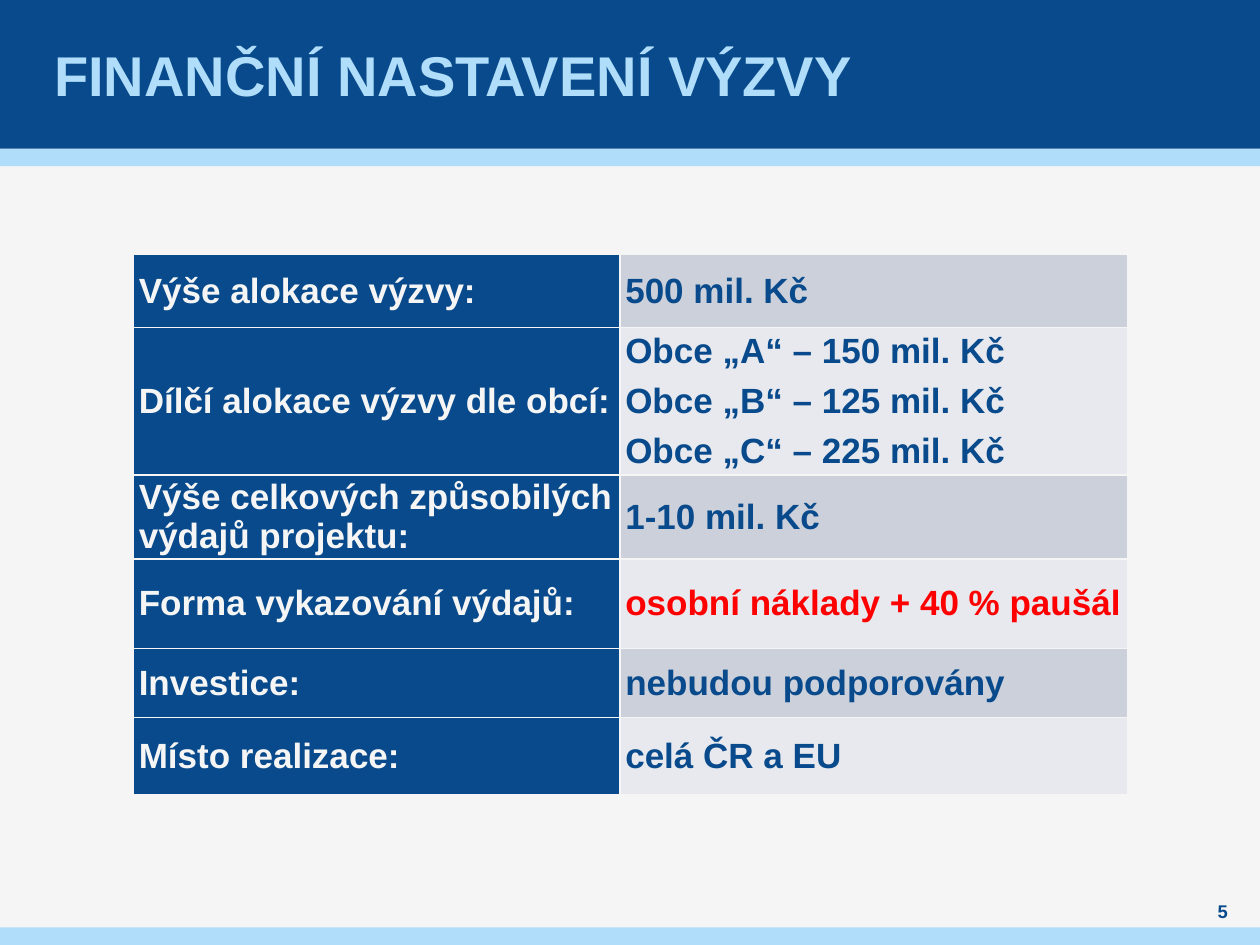
import pptx
import pptx.dml.color
import pptx.enum.shapes
import pptx.enum.text
import pptx.oxml
import pptx.oxml.ns
import pptx.util
from pptx.util import Pt

# Content
TITLE = "FINANČNÍ NASTAVENÍ VÝZVY"
PAGE_NUMBER = "5"
NAVY, SKY, PALE, RED = "084A8B", "AFDDFA", "F5F5F5", "FF0000"
VALUE_FILLS = ("CCD0DA", "E7E9EE")
# label, value lines, value colour, row height
ROWS = [
    ("Výše alokace výzvy:", ["500 mil. Kč"], NAVY, 41.76),
    ("Dílčí alokace výzvy dle obcí:",
     ["Obce „A“ – 150 mil. Kč", "Obce „B“ – 125 mil. Kč", "Obce „C“ – 225 mil. Kč"],
     NAVY, 41.76),
    ("Výše celkových způsobilých výdajů projektu:", ["1-10 mil. Kč"], NAVY, 39.6),
    ("Forma vykazování výdajů:", ["osobní náklady + 40 % paušál"], RED, 51.12),
    ("Investice:", ["nebudou podporovány"], NAVY, 39.6),
    ("Místo realizace:", ["celá ČR a EU"], NAVY, 43.92),
]
COLUMN_WIDTHS = (278, 290)
WIDTH, HEIGHT = 720, 540
HEADER_HEIGHT, STRIPE_HEIGHT = 85, 10


def colour(hex_string):
    return pptx.dml.color.RGBColor.from_string(hex_string)


def set_fill(target, hex_string):
    target.fill.solid()
    target.fill.fore_color.rgb = colour(hex_string)


def format_runs(text_frame, size, hex_string):
    for paragraph in text_frame.paragraphs:
        for run in paragraph.runs:
            run.font.name = "Arial"
            run.font.size = Pt(size)
            run.font.bold = True
            run.font.color.rgb = colour(hex_string)


def set_margins(target, side):
    target.margin_left = target.margin_right = Pt(side)
    target.margin_top = target.margin_bottom = 0
    target.vertical_anchor = pptx.enum.text.MSO_ANCHOR.MIDDLE


def place(shape, left, top, width, height):
    shape.left, shape.top = Pt(left), Pt(top)
    shape.width, shape.height = Pt(width), Pt(height)


def add_band(slide, top, height, hex_string):
    band = slide.shapes.add_shape(
        pptx.enum.shapes.MSO_SHAPE.RECTANGLE, 0, Pt(top), Pt(WIDTH), Pt(height))
    band.shadow.inherit = False
    set_fill(band, hex_string)
    band.line.fill.background()
    return band


def add_borders(cell):
    properties = cell._tc.get_or_add_tcPr()
    for index, side in enumerate(("lnL", "lnR", "lnT", "lnB")):
        properties.insert(index, pptx.oxml.parse_xml(
            f'<a:{side} {pptx.oxml.ns.nsdecls("a")} w="{Pt(1)}"><a:solidFill>'
            f'<a:srgbClr val="{PALE}"/></a:solidFill></a:{side}>'))


def fill_cell(cell, lines, text_colour, fill_colour):
    set_margins(cell, 0)
    set_fill(cell, fill_colour)
    add_borders(cell)
    cell.text_frame.text = "\n".join(lines)
    for paragraph in cell.text_frame.paragraphs:
        paragraph.space_before = paragraph.space_after = Pt(3)
        paragraph._p.get_or_add_pPr().set("marL", str(Pt(3)))
    format_runs(cell.text_frame, 20, text_colour)


def add_settings_table(slide):
    frame = slide.shapes.add_table(
        len(ROWS), 2, Pt(76.3), Pt(145.5), Pt(sum(COLUMN_WIDTHS)), Pt(308))
    table = frame.table
    for column, width in zip(table.columns, COLUMN_WIDTHS):
        column.width = Pt(width)
    for index, (label, values, value_colour, height) in enumerate(ROWS):
        table.rows[index].height = Pt(height)
        fill_cell(table.cell(index, 0), [label], PALE, NAVY)
        fill_cell(table.cell(index, 1), values, value_colour, VALUE_FILLS[index % 2])
    frame.height = Pt(308)


def main():
    presentation = pptx.Presentation()
    presentation.slide_width, presentation.slide_height = Pt(WIDTH), Pt(HEIGHT)
    slide = presentation.slides.add_slide(presentation.slide_layouts[5])
    set_fill(slide.background, PALE)

    # Header and footer bands, behind the title
    bands = [
        add_band(slide, HEADER_HEIGHT, STRIPE_HEIGHT, SKY),
        add_band(slide, 0, HEADER_HEIGHT, NAVY),
        add_band(slide, HEIGHT - STRIPE_HEIGHT, STRIPE_HEIGHT, SKY),
    ]
    title = slide.shapes.title
    for band in bands:
        title._element.addprevious(band._element)

    # Title
    place(title, 28, 0, 663, HEADER_HEIGHT)
    title.text_frame.text = TITLE
    set_margins(title.text_frame, 3)
    title.text_frame.paragraphs[0].alignment = pptx.enum.text.PP_ALIGN.LEFT
    format_runs(title.text_frame, 32, SKY)

    # Page number
    number = slide.shapes.add_textbox(Pt(680.4), Pt(513.4), Pt(36.7), Pt(14.4))
    number.text_frame.word_wrap = True
    number.text_frame.text = PAGE_NUMBER
    set_margins(number.text_frame, 0)
    number.text_frame.paragraphs[0].alignment = pptx.enum.text.PP_ALIGN.CENTER
    format_runs(number.text_frame, 10.5, NAVY)

    add_settings_table(slide)
    presentation.save("out.pptx")


if __name__ == "__main__":
    main()
